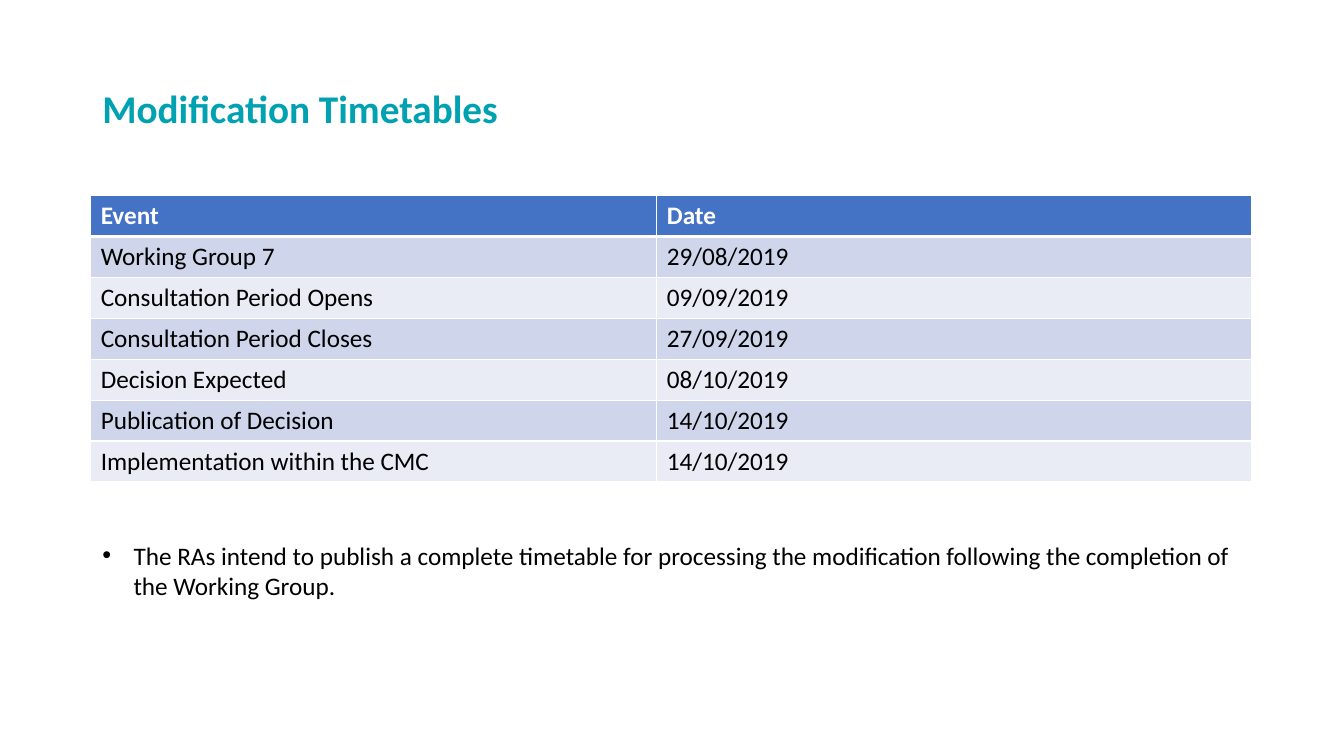
from lxml.etree import SubElement
from pptx import Presentation
from pptx.dml.color import RGBColor
from pptx.enum.text import MSO_ANCHOR
from pptx.oxml.ns import qn
from pptx.util import Inches, Pt

TEAL = RGBColor(0x00, 0xA1, 0xB1)
BLUE = RGBColor(0x44, 0x72, 0xC4)
BAND_DARK = RGBColor(0xCF, 0xD5, 0xEA)
BAND_LIGHT = RGBColor(0xE9, 0xEB, 0xF5)
WHITE = RGBColor(0xFF, 0xFF, 0xFF)
BLACK = RGBColor(0x00, 0x00, 0x00)

EVENTS = [
    ("Event", "Date"),
    ("Working Group 7", "29/08/2019"),
    ("Consultation Period Opens", "09/09/2019"),
    ("Consultation Period Closes", "27/09/2019"),
    ("Decision Expected", "08/10/2019"),
    ("Publication of Decision", "14/10/2019"),
    ("Implementation within the CMC", "14/10/2019"),
]


def write(tf, text, size=18, color=BLACK, bold=False, font="Calibri", spacing=None):
    p = tf.paragraphs[0]
    p.line_spacing = spacing
    r = p.add_run()
    r.text = text
    r.font.name, r.font.size, r.font.bold = font, Pt(size), bold
    r.font.color.rgb = color
    return p


def set_borders(cell, **widths):
    """Draw white cell sides; widths are points keyed by L, R, T and B."""
    tcPr = cell._tc.get_or_add_tcPr()
    for side, width in widths.items():
        ln = SubElement(tcPr, qn(f"a:ln{side}"), w=str(Pt(width)))
        fill = SubElement(ln, qn("a:solidFill"))
        SubElement(fill, qn("a:srgbClr"), val=str(WHITE))


class Deck:
    """Slide with a grid of 160 columns by 90 rows."""

    def __init__(self):
        self.prs = Presentation()
        self.prs.slide_width, self.prs.slide_height = Inches(13.33), Inches(7.5)
        self.s = self.prs.slides.add_slide(self.prs.slide_layouts[6])

    def x(self, columns):
        return round(self.prs.slide_width * columns / 160)

    def y(self, rows):
        return round(self.prs.slide_height * rows / 90)

    def text_box(self, col, row, cols, rows, anchor=MSO_ANCHOR.TOP):
        box = self.s.shapes.add_textbox(self.x(col), self.y(row), self.x(cols), self.y(rows))
        tf = box.text_frame
        tf.word_wrap = True
        tf.vertical_anchor = anchor
        return tf

    def title(self, text, *area):
        tf = self.text_box(*area, anchor=MSO_ANCHOR.MIDDLE)
        write(tf, text, size=28, color=TEAL, bold=True, spacing=0.7)

    def bullet(self, text, *area):
        pPr = write(self.text_box(*area), text)._p.get_or_add_pPr()
        indent = Inches(0.31)
        pPr.set("marL", str(indent))
        pPr.set("indent", str(-indent))
        SubElement(pPr, qn("a:buFont"), typeface="Arial")
        SubElement(pPr, qn("a:buChar"), char="•")

    def table(self, data, col, row, widths, row_height):
        table = self.s.shapes.add_table(
            len(data), len(widths), self.x(col), self.y(row),
            self.x(sum(widths)), self.y(row_height * len(data))).table
        for column, width in zip(table.columns, widths):
            column.width = self.x(width)
        for i, values in enumerate(data):
            header = i == 0
            band = BLUE if header else BAND_DARK if i % 2 else BAND_LIGHT
            for j, value in enumerate(values):
                cell = table.cell(i, j)
                set_borders(cell, L=1, R=1, T=3 if i == 1 else 1, B=3 if header else 1)
                cell.fill.solid()
                cell.fill.fore_color.rgb = band
                write(cell.text_frame, value, color=WHITE if header else BLACK, bold=header)


def main():
    deck = Deck()
    deck.title("Modification Timetables", 11, 4.8, 138, 17.4)
    deck.table(EVENTS, 10.8, 23.3, widths=(67.4, 70.8), row_height=4.87)
    deck.bullet("The RAs intend to publish a complete timetable for processing the "
                "modification following the completion of the Working Group.",
                11, 63.7, 138, 8.5)
    deck.prs.save("out.pptx")


if __name__ == "__main__":
    main()
